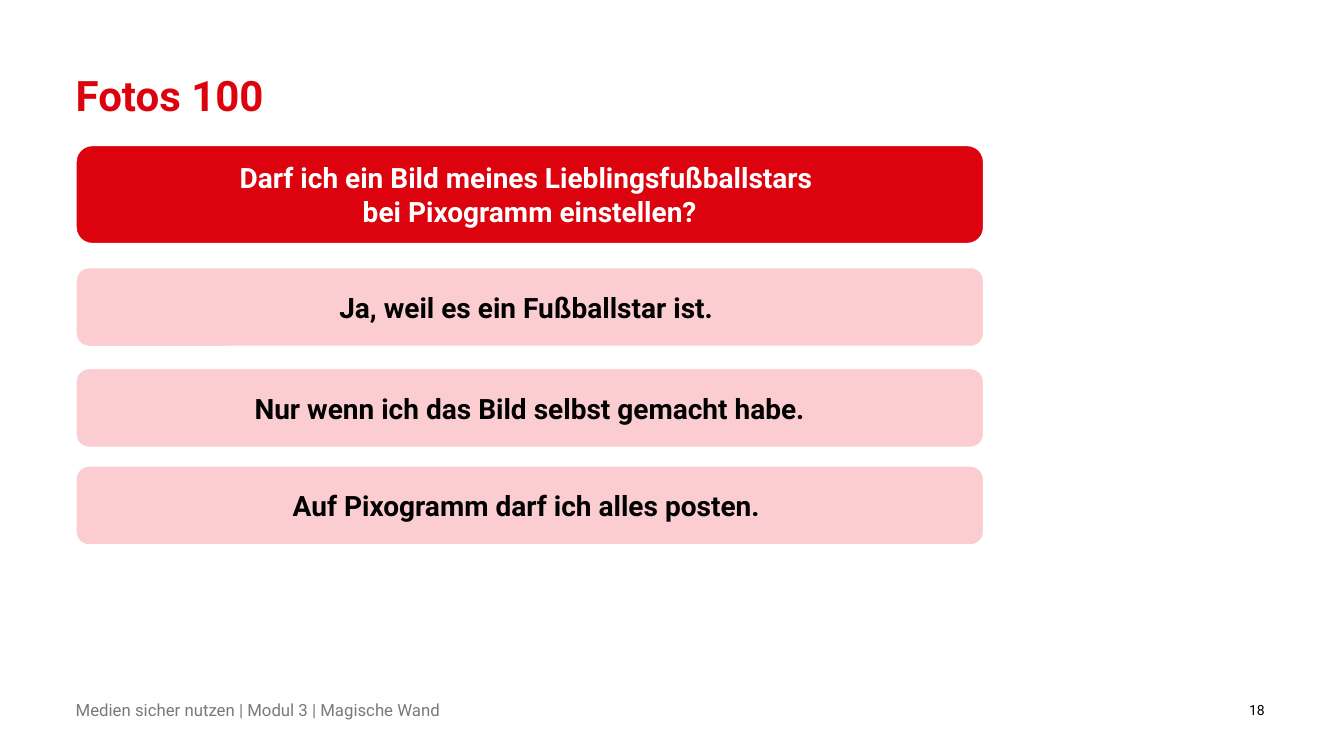
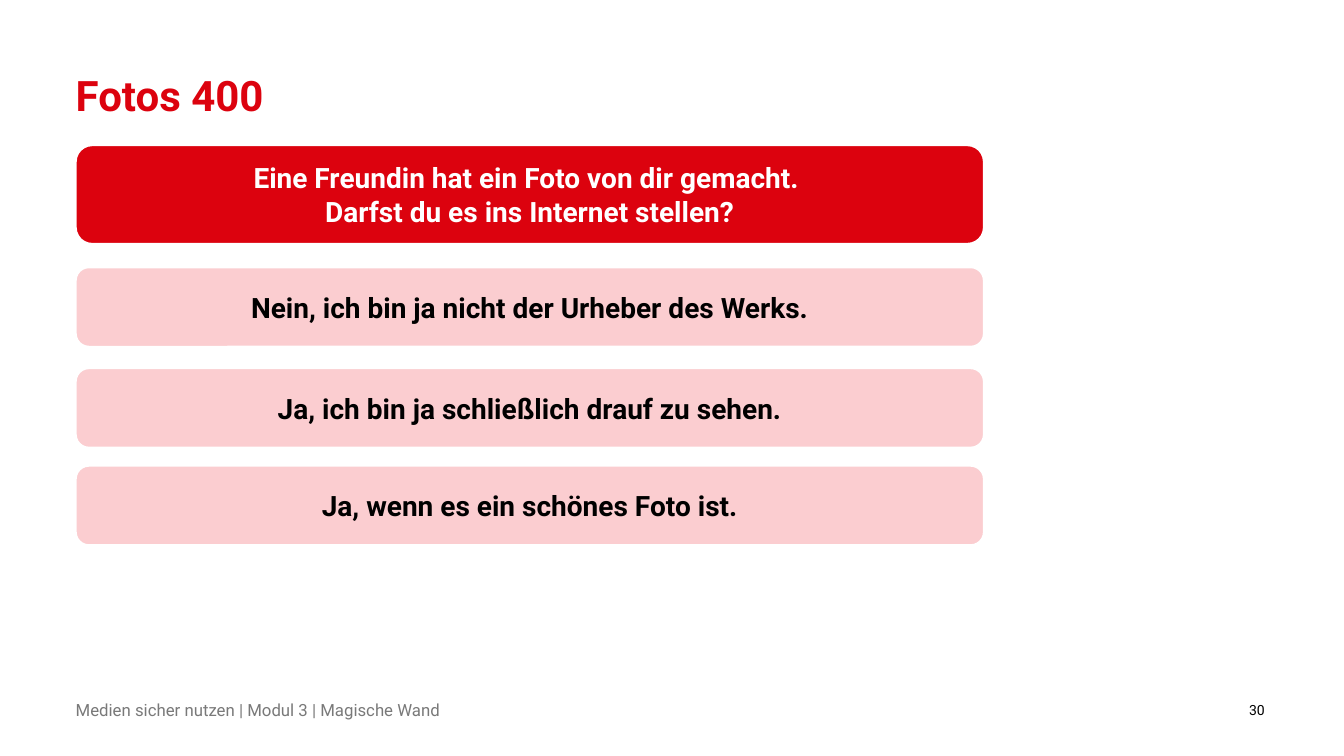
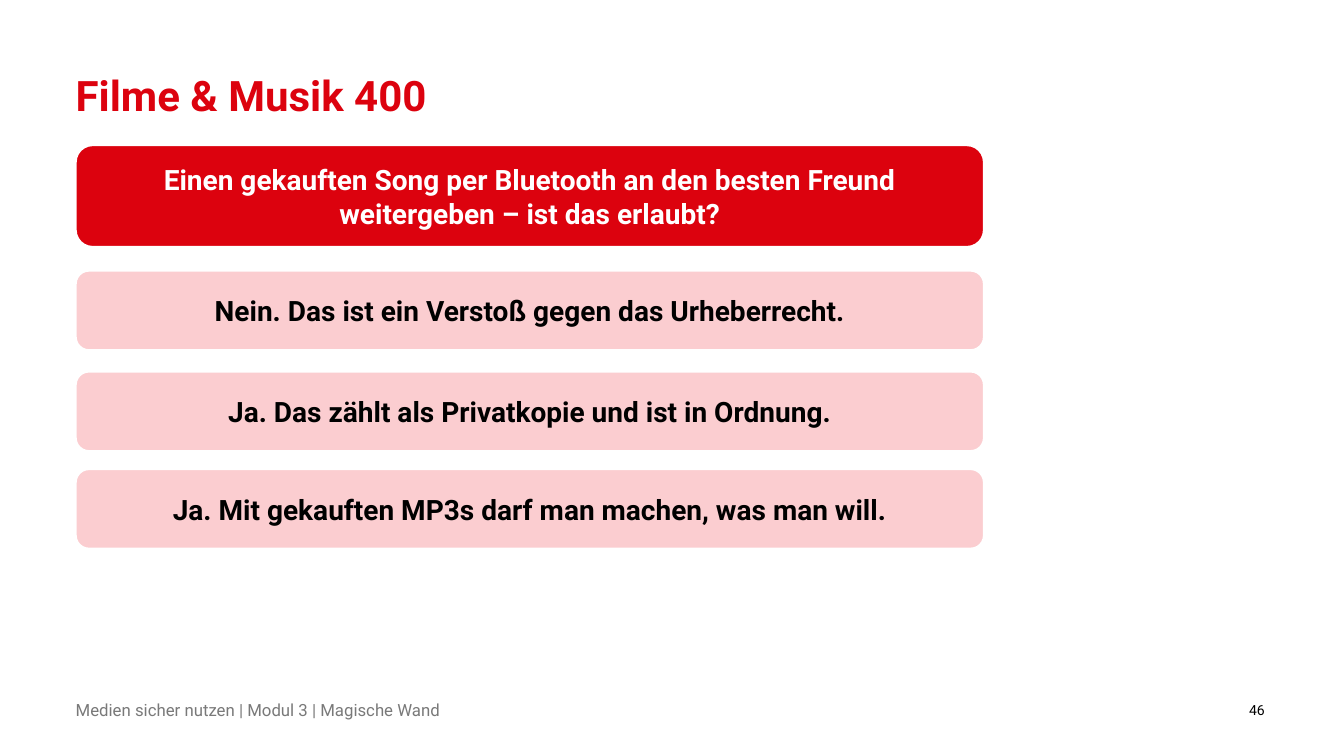
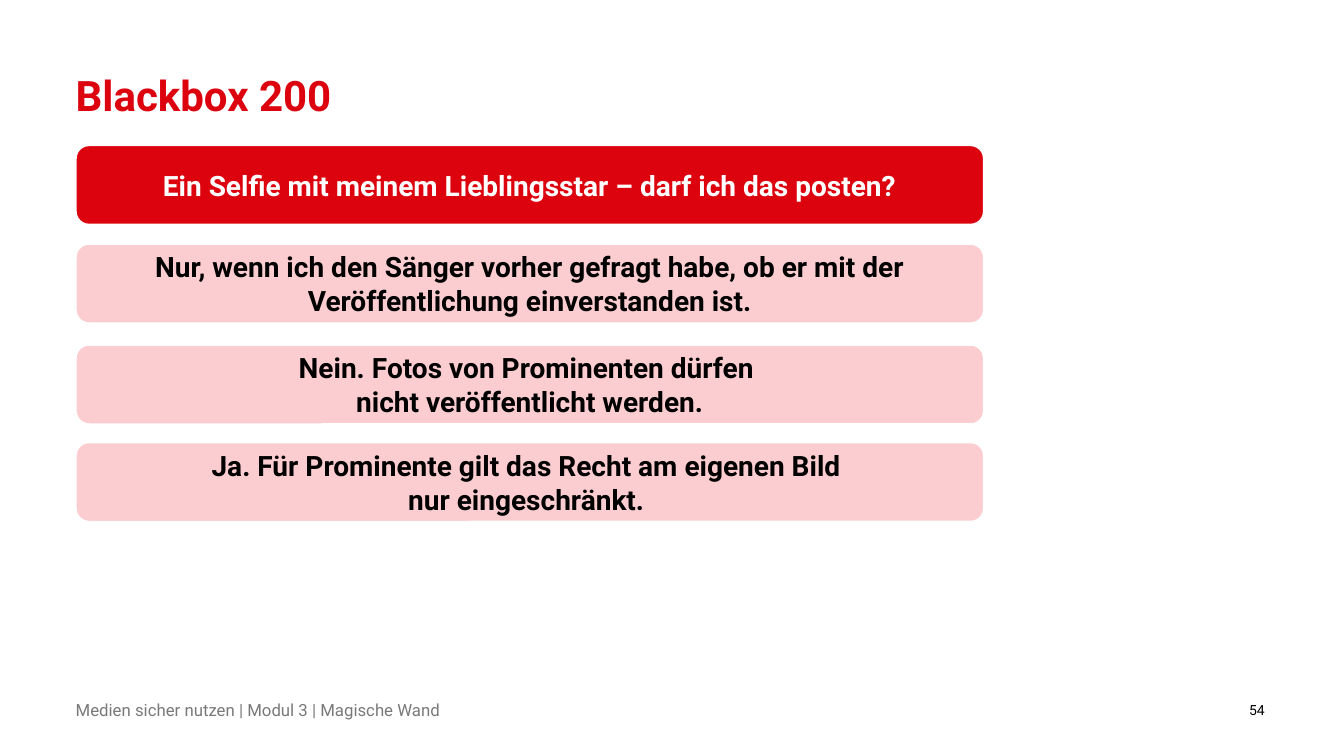
import pptx
import pptx.util
import pptx.dml.color
import pptx.enum.shapes
import pptx.enum.text
import pptx.oxml
import pptx.oxml.ns

Pt = pptx.util.Pt
RGB = pptx.dml.color.RGBColor
ALIGN = pptx.enum.text.PP_ALIGN
ANCHOR = pptx.enum.text.MSO_ANCHOR

# Colours and font
RED = RGB(0xDC, 0x02, 0x0E)
PINK = RGB(0xFB, 0xC1, 0xC5)
GREY = RGB(0x79, 0x79, 0x79)
BLACK = RGB(0, 0, 0)
WHITE = RGB(0xFF, 0xFF, 0xFF)
FONT = "Roboto"

# Grid of 100 columns by 100 rows
GRID = 100
LEFT, RIGHT = 5.63, 94.1
BAR = 67.58            # width of question and answers
TOP = 19.2             # top of the question
HIGH = 10.53           # height of one answer
STEPS = (0, 13.35, 26.25)
FOOT, LINE = 92.8, 2.13

FOOTER = "Medien sicher nutzen | Modul 3 | Magische Wand"

# Title, page, question height, top of first answer, question, answers
QUIZ = [
    ("Fotos 100", 18, 13.07, 35.35,
     "Darf ich ein Bild meines Lieblingsfußballstars \vbei Pixogramm einstellen?",
     ["Ja, weil es ein Fußballstar ist. ",
      "Nur wenn ich das Bild selbst gemacht habe.",
      "Auf Pixogramm darf ich alles posten. "]),
    ("Fotos 400", 30, 13.07, 35.35,
     "Eine Freundin hat ein Foto von dir gemacht. \vDarfst du es ins Internet stellen?",
     ["Nein, ich bin ja nicht der Urheber des Werks.",
      "Ja, ich bin ja schließlich drauf zu sehen.",
      "Ja, wenn es ein schönes Foto ist."]),
    ("Filme & Musik 400", 46, 13.47, 35.8,
     "Einen gekauften Song per Bluetooth an den besten Freund "
     "weitergeben – ist das erlaubt?",
     ["Nein. Das ist ein Verstoß gegen das Urheberrecht.",
      "Ja. Das zählt als Privatkopie und ist in Ordnung.",
      "Ja. Mit gekauften MP3s darf man machen, was man will."]),
    ("Blackbox 200", 54, HIGH, 32.25,
     "Ein Selfie mit meinem Lieblingsstar – darf ich das posten?",
     ["Nur, wenn ich den Sänger vorher gefragt habe, ob er mit der "
      "Veröffentlichung einverstanden ist.",
      "Nein. Fotos von Prominenten dürfen \vnicht veröffentlicht werden.",
      "Ja. Für Prominente gilt das Recht am eigenen Bild \vnur eingeschränkt. "]),
]


class Deck:
    """Holds the style and the current slide."""

    def __init__(self):
        self.show = pptx.Presentation()
        self.show.slide_width = pptx.util.Inches(13.333)
        self.show.slide_height = pptx.util.Inches(7.5)

    def add(self):
        self.slide = self.show.slides.add_slide(self.show.slide_layouts[6])

    def place(self, col, row, cols, rows):
        wide = self.show.slide_width / GRID
        high = self.show.slide_height / GRID
        return [round(n) for n in (col * wide, row * high, cols * wide, rows * high)]

    def fill_in(self, shape, text, size, color, bold, align, anchor):
        frame = shape.text_frame
        frame.word_wrap = True
        frame.vertical_anchor = anchor
        frame.text = text
        para = frame.paragraphs[0]
        para.alignment = align
        for run in para.runs:
            font = run.font
            font.name, font.size, font.bold = FONT, Pt(size), bold
            font.color.rgb = color
        return para

    def label(self, area, text, size, color, bold=False,
              align=ALIGN.LEFT, anchor=ANCHOR.MIDDLE):
        box = self.slide.shapes.add_textbox(*self.place(*area))
        frame = box.text_frame
        frame.margin_left = frame.margin_right = 0
        frame.margin_top = frame.margin_bottom = 0
        return self.fill_in(box, text, size, color, bold, align, anchor)

    def title(self, text):
        area = (LEFT, 10, RIGHT - LEFT, 6.13)
        para = self.label(area, text, 30, RED, True, anchor=ANCHOR.TOP)
        para.line_spacing = 0.9

    def footer(self, page):
        self.label((LEFT, FOOT, 73.8, LINE), FOOTER, 12, GREY)
        self.label((RIGHT - 5.25, FOOT, 5.25, LINE), str(page), 10, BLACK,
                   align=ALIGN.RIGHT)

    def bar(self, row, rows, text, fill, color, alpha=None):
        kind = pptx.enum.shapes.MSO_SHAPE.ROUNDED_RECTANGLE
        shape = self.slide.shapes.add_shape(kind, *self.place(LEFT, row, BAR, rows))
        shape.shadow.inherit = False
        shape.fill.solid()
        shape.fill.fore_color.rgb = fill
        shape.line.color.rgb = WHITE
        shape.line.width = Pt(1.5)
        if alpha:
            tint = shape.element.spPr.find(".//" + pptx.oxml.ns.qn("a:srgbClr"))
            tint.append(pptx.oxml.parse_xml(
                f'<a:alpha {pptx.oxml.ns.nsdecls("a")} val="{alpha * 1000}"/>'))
        self.fill_in(shape, text, 20, color, True, ALIGN.CENTER, ANCHOR.MIDDLE)

    def ask(self, text, rows):
        self.bar(TOP, rows, text, RED, WHITE)

    def answer(self, text, row):
        self.bar(row, HIGH, text, PINK, BLACK, alpha=80)


def main():
    deck = Deck()
    for title, page, rows, first, question, answers in QUIZ:
        deck.add()
        deck.title(title)
        deck.footer(page)
        deck.ask(question, rows)
        for step, text in zip(STEPS, answers):
            deck.answer(text, first + step)
    deck.show.save("out.pptx")


if __name__ == "__main__":
    main()
